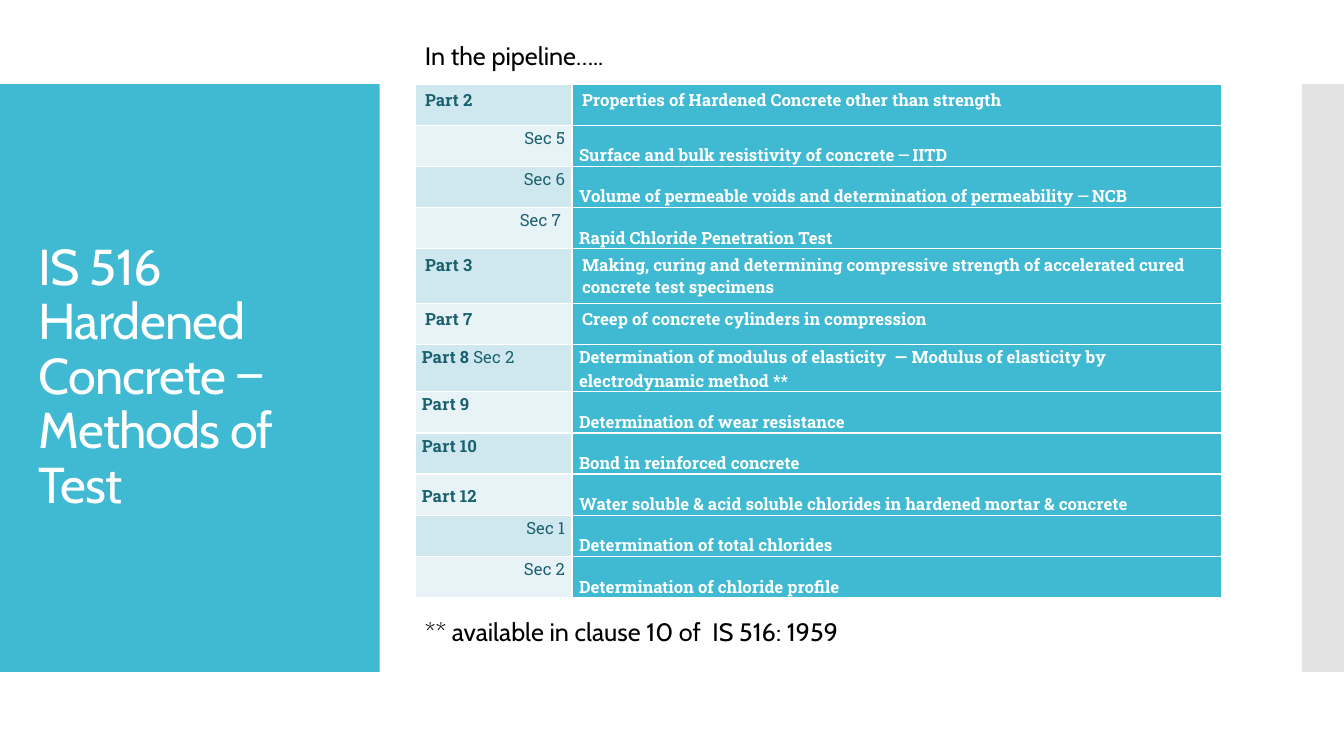
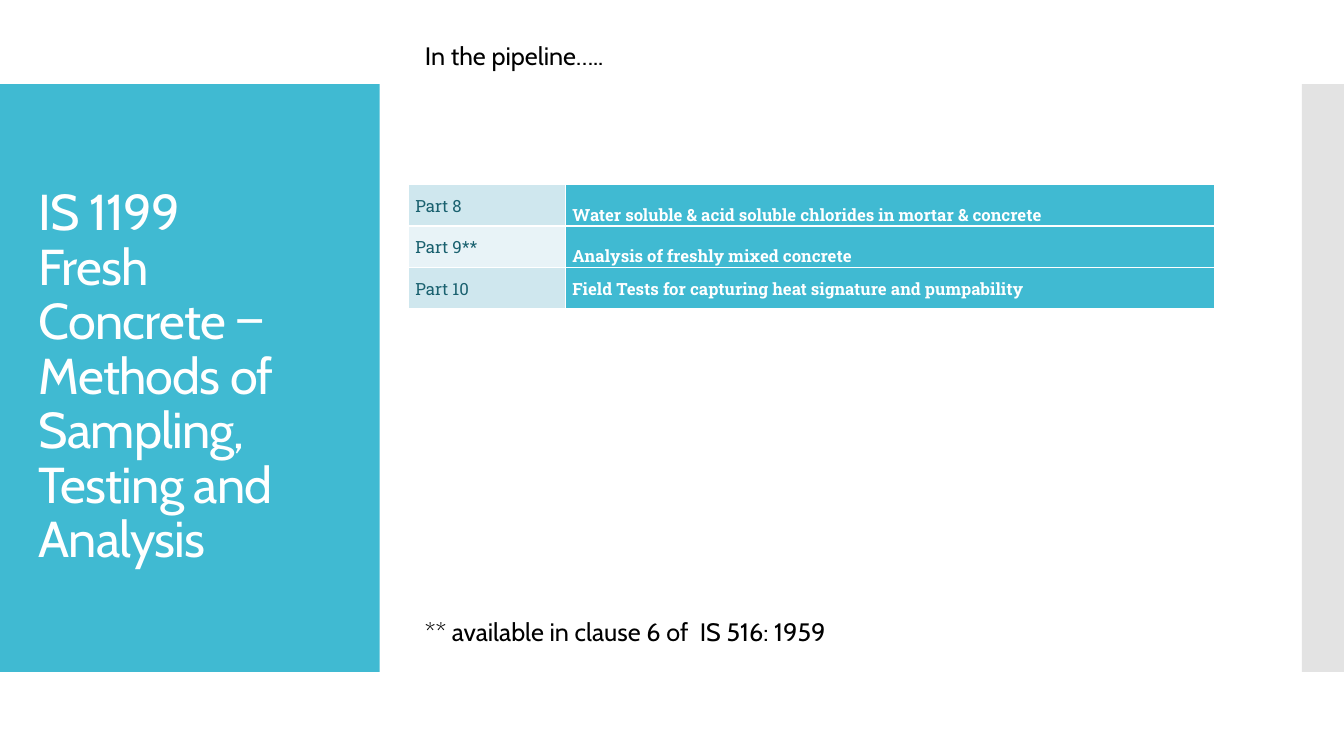
from dataclasses import dataclass

from lxml.etree import SubElement
from pptx import Presentation
from pptx.dml.color import RGBColor
from pptx.enum.shapes import MSO_SHAPE
from pptx.enum.text import MSO_ANCHOR, MSO_AUTO_SIZE, PP_ALIGN
from pptx.oxml import parse_xml
from pptx.oxml.ns import nsdecls, qn
from pptx.shapes.autoshape import Shape
from pptx.slide import Slide, SlideLayout
from pptx.table import _Cell
from pptx.text.text import Font
from pptx.util import Inches, Pt

GRID_COLUMNS, GRID_ROWS = 16, 9
UNIT = Inches(7.5) // GRID_ROWS

COLORS = {
    "accent": "40BAD2",
    "edge": "C8C8C8",
    "label": "1A616F",
    "odd": "CFE7EE",
    "even": "E8F3F7",
    "white": "FFFFFF",
    "black": "000000",
}
HEADING_FONT, TABLE_FONT = "Cabin", "Roboto Slab"
LABEL_COLUMN, DESCRIPTION_COLUMN, TABLE_ROW = 1.87, 7.73, 0.49


@dataclass(frozen=True)
class Box:
    """A place on the slide, in grid columns and rows."""
    column: float
    row: float
    columns: float
    rows: float

    def lengths(self) -> tuple[int, int, int, int]:
        return tuple(round(value * UNIT) for value in
                     (self.column, self.row, self.columns, self.rows))


@dataclass(frozen=True)
class CellStyle:
    anchor: MSO_ANCHOR = MSO_ANCHOR.TOP
    alignment: PP_ALIGN = PP_ALIGN.LEFT
    side_margin: float = 0.07
    end_margin: float = 0
    line_spacing: float = 1.07


ROOMY = CellStyle(side_margin=0.1, end_margin=0.05, line_spacing=1.0)
TOP = CellStyle()
RIGHT = CellStyle(alignment=PP_ALIGN.RIGHT)
MIDDLE = CellStyle(anchor=MSO_ANCHOR.MIDDLE)
BOTTOM = CellStyle(anchor=MSO_ANCHOR.BOTTOM)


@dataclass(frozen=True)
class Entry:
    bold_label: str
    plain_label: str
    description: str
    label_style: CellStyle = TOP
    description_style: CellStyle = BOTTOM


@dataclass(frozen=True)
class Standard:
    title: str
    table_column: float
    table_row: float
    entries: tuple[Entry, ...]
    note: str


TITLE_BOX = Box(0.34, 1.48, 3.86, 6.04)
HEADING_BOX = Box(4.94, 0.42, 9.44, 0.48)
NOTE_BOX = Box(4.94, 7.28, 9.6, 0.48)
TITLE_BAND = Box(0, 1, 4.52, 7)
EDGE_BAND = Box(GRID_COLUMNS - 0.5, 1, 0.5, 7)

STANDARDS = (
    Standard(
        "IS 516 Hardened Concrete ‒ Methods of Test", 4.94, 1,
        (
            Entry("Part 2", "", "Properties of Hardened Concrete other than strength",
                  ROOMY, ROOMY),
            Entry("", "Sec 5", "Surface and bulk resistivity of concrete ─ IITD", RIGHT),
            Entry("", "Sec 6", "Volume of permeable voids and determination of "
                  "permeability ─ NCB", RIGHT),
            Entry("", "Sec 7 ", "Rapid Chloride Penetration Test", RIGHT),
            Entry("Part 3", "", "Making, curing and determining compressive strength of "
                  "accelerated cured concrete test specimens", ROOMY, ROOMY),
            Entry("Part 7", "", "Creep of concrete cylinders in compression", ROOMY, ROOMY),
            Entry("Part 8 ", "Sec 2", "Determination of modulus of elasticity  ― Modulus of "
                  "elasticity by electrodynamic method **"),
            Entry("Part 9", "", "Determination of wear resistance"),
            Entry("Part 10", "", "Bond in reinforced concrete"),
            Entry("Part 12", "", "Water soluble & acid soluble chlorides in hardened "
                  "mortar & concrete", MIDDLE),
            Entry("", "Sec 1", "Determination of total chlorides", RIGHT),
            Entry("", "Sec 2", "Determination of chloride profile", RIGHT),
        ),
        "** available in clause 10 of  IS 516: 1959",
    ),
    Standard(
        "IS 1199\vFresh Concrete ‒ Methods of Sampling, Testing and Analysis", 4.86, 2.2,
        (
            Entry("", "Part 8", "Water soluble & acid soluble chlorides in mortar & concrete",
                  MIDDLE),
            Entry("", "Part 9**", "Analysis of freshly mixed concrete", MIDDLE),
            Entry("", "Part 10", "Field Tests for capturing heat signature and pumpability",
                  MIDDLE, MIDDLE),
        ),
        "** available in clause 6 of  IS 516: 1959",
    ),
)


def rgb(name: str) -> RGBColor:
    return RGBColor.from_string(COLORS[name])


def format_font(font: Font, name: str, size: float, color: str, bold: bool = False) -> None:
    font.name, font.size, font.bold = name, Pt(size), bold
    font.color.rgb = rgb(color)


def add_band(slide: Slide, box: Box, color: str) -> Shape:
    band = slide.shapes.add_shape(MSO_SHAPE.RECTANGLE, *box.lengths())
    band.shadow.inherit = False
    band.fill.solid()
    band.fill.fore_color.rgb = rgb(color)
    band.line.fill.background()
    return band


def move_bands_to_layout(slide: Slide, layout: SlideLayout) -> None:
    """Draw the bands and keep them on the layout, behind its placeholders."""
    edge = add_band(slide, EDGE_BAND, "edge")
    SubElement(next(edge.element.iter(qn("a:srgbClr"))), qn("a:alpha"), val="50000")
    for band in (edge, add_band(slide, TITLE_BAND, "accent")):
        layout.shapes.element.insert(2, band.element)


def place_layout_title(layout: SlideLayout) -> None:
    title = next(shape for shape in layout.placeholders
                 if shape.placeholder_format.idx == 0)
    title.left, title.top, title.width, title.height = TITLE_BOX.lengths()


def set_title(slide: Slide, text: str) -> None:
    title = slide.shapes.title
    frame = title.text_frame
    frame.text = text
    frame.word_wrap = True
    frame.auto_size = MSO_AUTO_SIZE.NONE
    frame.vertical_anchor = MSO_ANCHOR.MIDDLE
    paragraph = frame.paragraphs[0]
    paragraph.alignment = PP_ALIGN.LEFT
    paragraph.line_spacing = 0.9
    for run in paragraph.runs:
        format_font(run.font, HEADING_FONT, 36, "white")
    for properties in title.element.iter(qn("a:rPr")):
        properties.set("spc", "-60")


def add_caption(slide: Slide, box: Box, text: str) -> None:
    frame = slide.shapes.add_textbox(*box.lengths()).text_frame
    frame.word_wrap = True
    frame.auto_size = MSO_AUTO_SIZE.SHAPE_TO_FIT_TEXT
    frame.text = text
    format_font(frame.paragraphs[0].runs[0].font, HEADING_FONT, 18, "black")


def add_borders(cell: _Cell) -> None:
    properties = cell._tc.get_or_add_tcPr()
    for index, side in enumerate(("lnL", "lnR", "lnT", "lnB")):
        properties.insert(index, parse_xml(
            f'<a:{side} {nsdecls("a")} w="{Pt(1)}"><a:solidFill>'
            f'<a:srgbClr val="{COLORS["white"]}"/></a:solidFill></a:{side}>'))


def fill_cell(cell: _Cell, pieces: tuple[tuple[str, bool], ...], style: CellStyle,
              fill: str, color: str) -> None:
    """Write pieces of text, each with its own boldness, into a styled cell."""
    cell.fill.solid()
    cell.fill.fore_color.rgb = rgb(fill)
    cell.vertical_anchor = style.anchor
    cell.margin_left = cell.margin_right = Inches(style.side_margin)
    cell.margin_top = cell.margin_bottom = Inches(style.end_margin)
    add_borders(cell)
    paragraph = cell.text_frame.paragraphs[0]
    paragraph.alignment = style.alignment
    paragraph.line_spacing = style.line_spacing
    for text, bold in pieces:
        if text:
            run = paragraph.add_run()
            run.text = text
            format_font(run.font, TABLE_FONT, 12, color, bold)


def add_standard_table(slide: Slide, standard: Standard) -> None:
    entries = standard.entries
    box = Box(standard.table_column, standard.table_row,
              LABEL_COLUMN + DESCRIPTION_COLUMN, TABLE_ROW * len(entries))
    table = slide.shapes.add_table(len(entries), 2, *box.lengths()).table
    table.first_row = table.horz_banding = False
    for column, width in zip(table.columns, (LABEL_COLUMN, DESCRIPTION_COLUMN)):
        column.width = round(width * UNIT)
    for index, entry in enumerate(entries):
        fill_cell(table.cell(index, 0),
                  ((entry.bold_label, True), (entry.plain_label, False)),
                  entry.label_style, "even" if index % 2 else "odd", "label")
        fill_cell(table.cell(index, 1), ((entry.description, True),),
                  entry.description_style, "accent", "white")


def main() -> None:
    presentation = Presentation()
    presentation.slide_width = GRID_COLUMNS * UNIT
    presentation.slide_height = GRID_ROWS * UNIT
    layout = presentation.slide_layouts.get_by_name("Title Only")
    place_layout_title(layout)
    for standard in STANDARDS:
        slide = presentation.slides.add_slide(layout)
        set_title(slide, standard.title)
        add_standard_table(slide, standard)
        add_caption(slide, HEADING_BOX, "In the pipeline…..")
        add_caption(slide, NOTE_BOX, standard.note)
    move_bands_to_layout(presentation.slides[0], layout)
    presentation.save("out.pptx")


if __name__ == "__main__":
    main()
